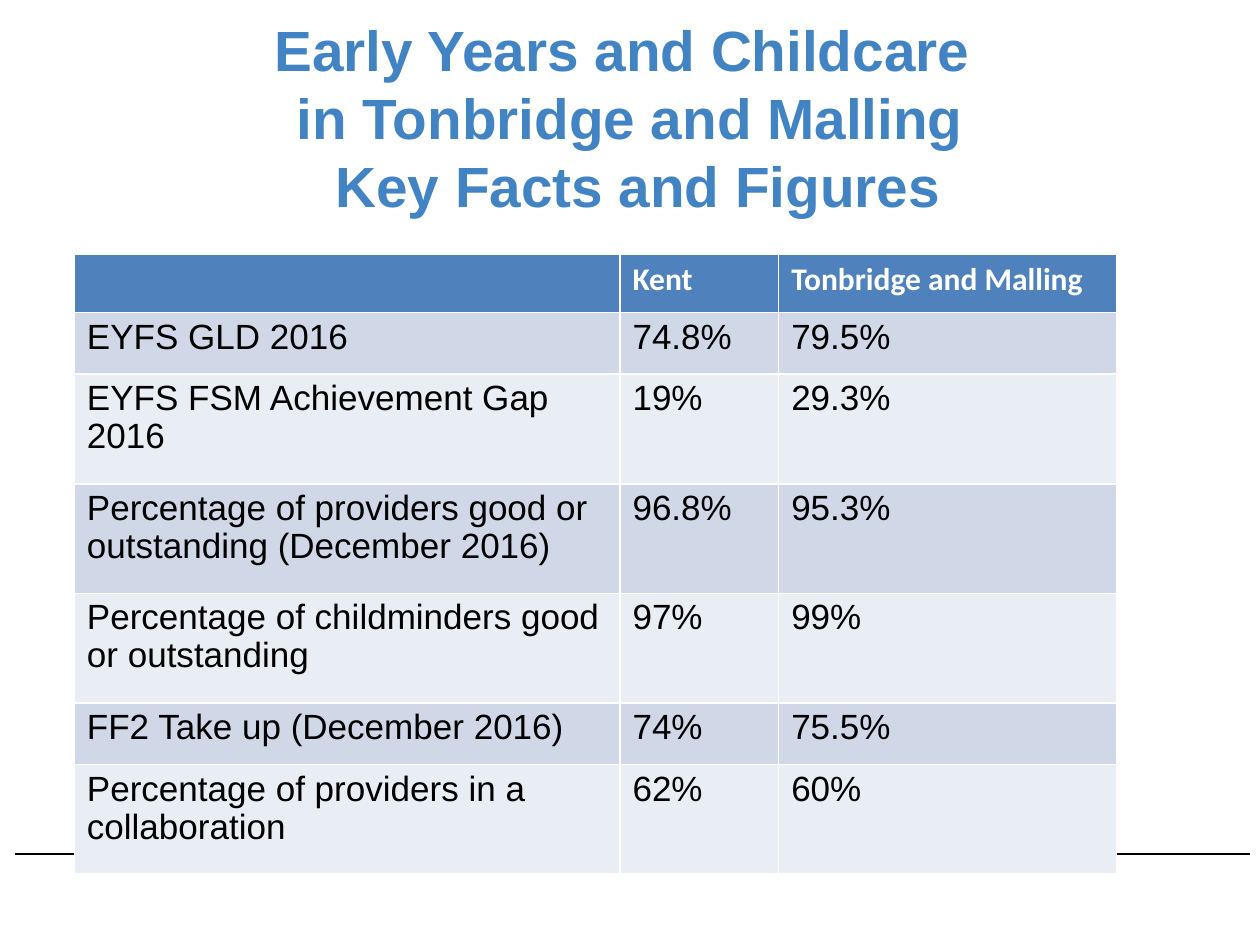
"""Build the Tonbridge and Malling early years key facts slide."""
from dataclasses import dataclass

from lxml import etree
from pptx import Presentation
from pptx.dml.color import RGBColor
from pptx.enum.shapes import MSO_CONNECTOR
from pptx.enum.text import MSO_ANCHOR, PP_ALIGN
from pptx.oxml.ns import qn
from pptx.util import Inches, Pt

STRAIGHT = MSO_CONNECTOR.STRAIGHT
MIDDLE = MSO_ANCHOR.MIDDLE
CENTER = PP_ALIGN.CENTER


@dataclass(frozen=True)
class Theme:
    """Colours, fonts and type sizes."""
    title: RGBColor = RGBColor(0x42, 0x83, 0xC4)
    header: RGBColor = RGBColor(0x4F, 0x81, 0xBD)
    bands: tuple = (RGBColor(0xD0, 0xD8, 0xE8), RGBColor(0xE9, 0xED, 0xF4))
    white: RGBColor = RGBColor(0xFF, 0xFF, 0xFF)
    black: RGBColor = RGBColor(0, 0, 0)
    body_font: str = "Arial"
    header_font: str = "Calibri"
    title_size: float = 32.4
    header_size: float = 18
    body_size: float = 20


THEME = Theme()
TITLE = "Early Years and Childcare \nin Tonbridge and Malling\n Key Facts and Figures"
COL_WIDTHS = (4.33, 1.26, 2.68)
HEADER_HEIGHT, SHORT_ROW, TALL_ROW = 0.46, 0.49, 0.87
HEADINGS = ("", "Kent", "Tonbridge and Malling")
FACTS = (
    (SHORT_ROW, "EYFS GLD 2016", "74.8%", "79.5%"),
    (TALL_ROW, "EYFS FSM Achievement Gap 2016", "19%", "29.3%"),
    (TALL_ROW, "Percentage of providers good or outstanding (December 2016)",
     "96.8%", "95.3%"),
    (TALL_ROW, "Percentage of childminders good or outstanding", "97%", "99%"),
    (SHORT_ROW, "FF2 Take up (December 2016)", "74%", "75.5%"),
    (TALL_ROW, "Percentage of providers in a collaboration", "62%", "60%"),
)


def style_font(p, name, size, color, bold):
    """Set the font of a paragraph."""
    p.font.name = name
    p.font.size = Pt(size)
    p.font.color.rgb = color
    p.font.bold = bold


def add_rule(slide, x1, x2, y):
    """Draw a thin horizontal rule."""
    line = slide.shapes.add_connector(
        STRAIGHT, Inches(x1), Inches(y), Inches(x2), Inches(y))
    line.line.color.rgb = THEME.black
    line.line.width = Pt(1)
    etree.SubElement(line._element.spPr, qn("a:effectLst"))


def add_title(slide, text):
    """Add the centred slide title."""
    sp = slide.shapes.add_textbox(Inches(0.5), Inches(0.3), Inches(9), Inches(1.25))
    tf = sp.text_frame
    tf.word_wrap = True
    tf.vertical_anchor = MIDDLE
    p = tf.paragraphs[0]
    p.text = text
    p.alignment = CENTER
    p.line_spacing = Pt(38.9)
    style_font(p, THEME.body_font, THEME.title_size, THEME.title, True)


def fill_row(row, height, texts, fill, font):
    """Set the height, fill and text of a table row."""
    row.height = Inches(height)
    for cell, text in zip(row.cells, texts):
        cell.fill.solid()
        cell.fill.fore_color.rgb = fill
        p = cell.text_frame.paragraphs[0]
        p.text = text
        p.line_spacing = 0.97
        style_font(p, *font)


def add_facts_table(slide):
    """Add the table that compares Kent with Tonbridge and Malling."""
    height = HEADER_HEIGHT + sum(fact[0] for fact in FACTS)
    table = slide.shapes.add_table(
        len(FACTS) + 1, len(COL_WIDTHS), Inches(0.59), Inches(2.02),
        Inches(sum(COL_WIDTHS)), Inches(height)).table
    for column, width in zip(table.columns, COL_WIDTHS):
        column.width = Inches(width)
    header_font = (THEME.header_font, THEME.header_size, THEME.white, True)
    body_font = (THEME.body_font, THEME.body_size, THEME.black, False)
    fill_row(table.rows[0], HEADER_HEIGHT, HEADINGS, THEME.header, header_font)
    for i, (row_height, *texts) in enumerate(FACTS):
        fill_row(table.rows[i + 1], row_height, texts, THEME.bands[i % 2], body_font)


def main():
    """Build and save the slide."""
    prs = Presentation()
    prs.slide_width, prs.slide_height = Inches(10), Inches(7.5)
    slide = prs.slides.add_slide(prs.slide_layouts[6])
    add_rule(slide, 0.12, 9.92, 6.78)
    add_title(slide, TITLE)
    add_facts_table(slide)
    prs.save("out.pptx")


if __name__ == "__main__":
    main()
